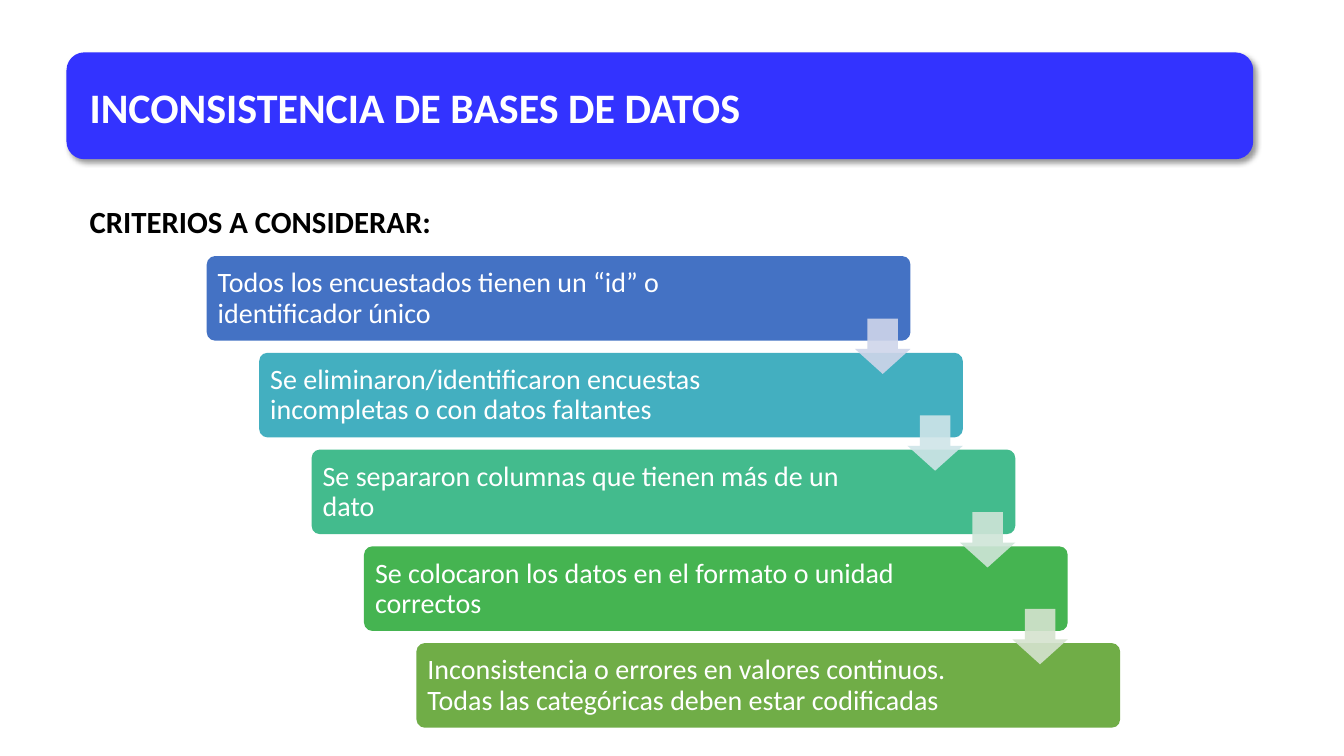
from lxml.etree import SubElement
from pptx import Presentation
from pptx.dml.color import RGBColor
from pptx.enum.shapes import MSO_SHAPE
from pptx.enum.text import MSO_ANCHOR
from pptx.oxml.ns import qn
from pptx.util import Emu, Pt

PX = 9144  # 100 px to the inch
FONT = "Calibri"
BLACK = RGBColor(0x00, 0x00, 0x00)
WHITE = RGBColor(0xFF, 0xFF, 0xFF)
BANNER_BLUE = RGBColor(0x33, 0x33, 0xFF)
BLUE = RGBColor(0x44, 0x72, 0xC4)
TEAL = RGBColor(0x43, 0xAF, 0xC0)
MINT = RGBColor(0x43, 0xBB, 0x8D)
GREEN = RGBColor(0x45, 0xB4, 0x51)
OLIVE = RGBColor(0x70, 0xAD, 0x47)
PALE_BLUE = RGBColor(0xCF, 0xD5, 0xEA)
PALE_TEAL = RGBColor(0xCF, 0xE5, 0xE8)
PALE_MINT = RGBColor(0xCF, 0xE5, 0xD8)
PALE_GREEN = RGBColor(0xD5, 0xE3, 0xCF)

STEPS = [
    ("Todos los encuestados tienen un “id” o identificador único", BLUE),
    ("Se eliminaron/identificaron encuestas incompletas o con datos faltantes", TEAL),
    ("Se separaron columnas que tienen más de un dato", MINT),
    ("Se colocaron los datos en el formato o unidad correctos", GREEN),
    ("Inconsistencia o errores en valores continuos. "
     "Todas las categóricas deben estar codificadas", OLIVE),
]
ARROWS = [PALE_BLUE, PALE_TEAL, PALE_MINT, PALE_GREEN]
STEP_X, STEP_Y = 52, 96


class Deck:
    def __init__(self, width, height):
        self.prs = Presentation()
        self.prs.slide_width = Emu(width * PX)
        self.prs.slide_height = Emu(height * PX)
        self.slide = self.prs.slides.add_slide(self.prs.slide_layouts[6])

    def shape(self, kind, box, color, adjustments=()):
        sp = self.slide.shapes.add_shape(kind, *(Emu(v * PX) for v in box))
        sp.shadow.inherit = False
        sp.fill.solid()
        sp.fill.fore_color.rgb = color
        sp.line.fill.background()
        for i, value in enumerate(adjustments):
            sp.adjustments[i] = value
        return sp

    def text(self, text, box, size, color, bold=False):
        sp = self.slide.shapes.add_textbox(*(Emu(v * PX) for v in box))
        tf = sp.text_frame
        tf.word_wrap = True
        p = tf.paragraphs[0]
        p.text = text
        p.font.name = FONT
        p.font.size = Pt(size)
        p.font.bold = bold
        p.font.color.rgb = color
        return tf

    def banner(self, box, color):
        sp = self.shape(MSO_SHAPE.ROUNDED_RECTANGLE, box, color)
        effects = sp._element.spPr.find(qn("a:effectLst"))
        shadow = SubElement(effects, qn("a:outerShdw"), blurRad=str(Pt(4)),
                            dist=str(Pt(3)), dir="2700000", algn="tl", rotWithShape="0")
        black = SubElement(shadow, qn("a:srgbClr"), val=str(BLACK))
        SubElement(black, qn("a:alpha"), val="40000")

    def step(self, x, y, text, color):
        self.shape(MSO_SHAPE.ROUNDED_RECTANGLE, (x, y, 698, 84), color, [0.1])
        tf = self.text(text, (x + 3, y + 3, 586, 79), 20, WHITE)
        tf.vertical_anchor = MSO_ANCHOR.MIDDLE
        tf.margin_left = tf.margin_right = tf.margin_top = tf.margin_bottom = Emu(8 * PX)
        tf.paragraphs[0].line_spacing = 0.9

    def arrow(self, x, y, color):
        sp = self.shape(MSO_SHAPE.DOWN_ARROW, (x, y, 55, 55), color, [0.55, 0.45])
        # python-pptx orders these as shaft width, head length
        clr = sp._element.spPr.find(qn("a:solidFill")).find(qn("a:srgbClr"))
        SubElement(clr, qn("a:alpha"), val="90000")


def main():
    deck = Deck(1333, 750)

    # Title banner and subtitle
    deck.banner((66, 52, 1177, 106), BANNER_BLUE)
    deck.text("INCONSISTENCIA DE BASES DE DATOS", (79, 76, 1098, 61), 30, WHITE, bold=True)
    deck.text("CRITERIOS A CONSIDERAR:", (79, 196, 1111, 47), 22, BLACK, bold=True)

    # Staircase of criteria
    for i, (text, color) in enumerate(STEPS):
        deck.step(205 + i * STEP_X, 254 + i * STEP_Y, text, color)

    # Arrows between the steps
    for i, color in enumerate(ARROWS):
        deck.arrow(848 + i * STEP_X, 316 + i * STEP_Y, color)

    deck.prs.save("out.pptx")


if __name__ == "__main__":
    main()
